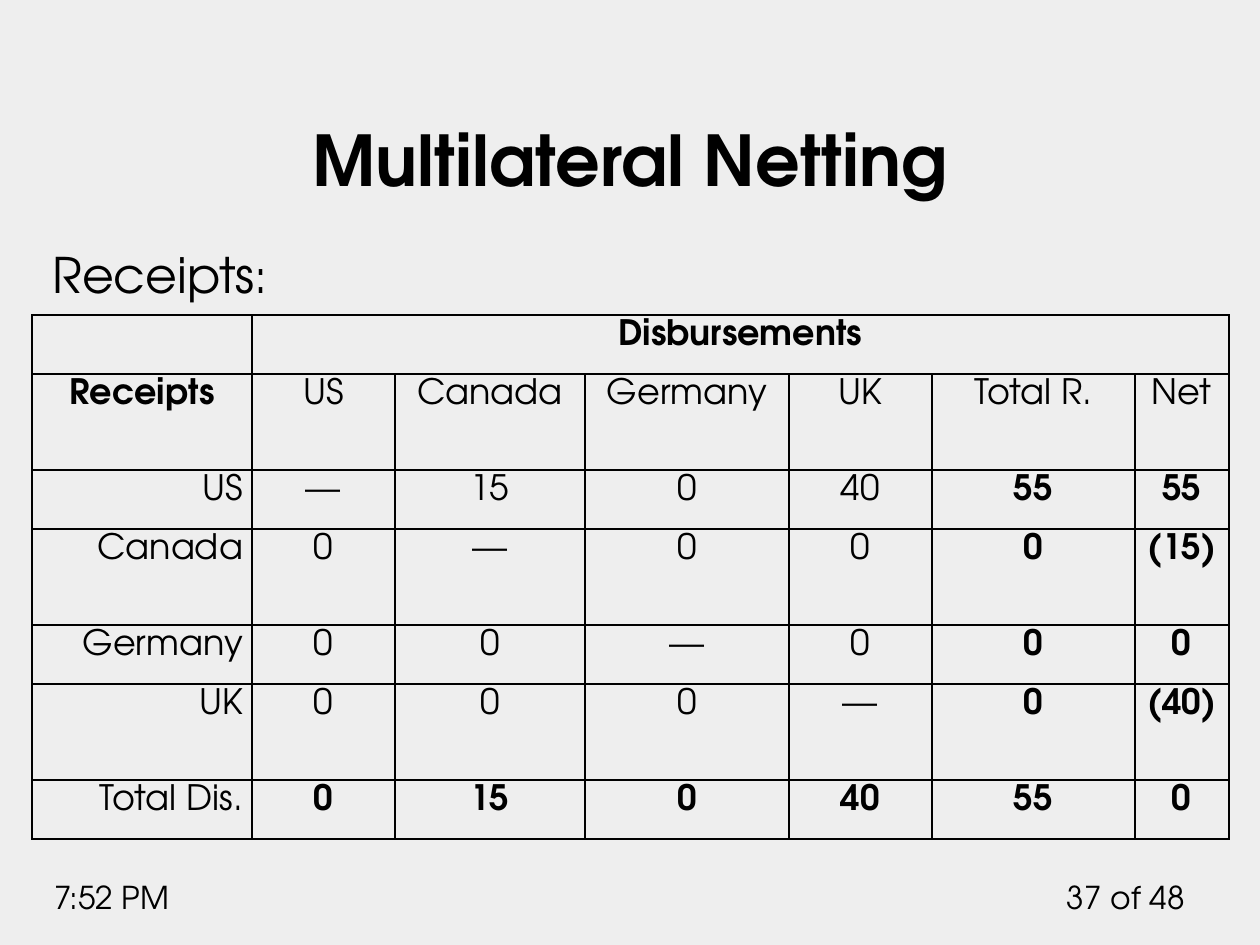
from dataclasses import dataclass

from lxml.etree import SubElement
from pptx import Presentation
from pptx.dml.color import RGBColor
from pptx.enum.text import MSO_ANCHOR, MSO_AUTO_SIZE, PP_ALIGN
from pptx.oxml.ns import qn
from pptx.slide import Slide
from pptx.util import Inches, Pt

COLORS = {"background": "EEEEEE", "ink": "000000"}
COLUMN_WIDTHS = [220, 143, 190, 204, 143, 203, 94]
ROW_HEIGHTS = [59, 96, 59, 96, 59, 96, 59]
NETTING_ROWS = [
    ["", "Disbursements", "", "", "", "", ""],
    ["Receipts", "US", "Canada", "Germany", "UK", "Total R.", "Net"],
    ["US", "—", "15", "0", "40", "55", "55"],
    ["Canada", "0", "—", "0", "0", "0", "(15)"],
    ["Germany", "0", "0", "—", "0", "0", "0"],
    ["UK", "0", "0", "0", "—", "0", "(40)"],
    ["Total Dis.", "0", "15", "0", "40", "55", "0"],
]


def px(length):
    return round(length * Inches(1) / 126)


def color(name):
    return RGBColor.from_string(COLORS[name])


@dataclass
class SlideBuilder:
    page: Slide
    typeface: str = "TeX Gyre Adventor"

    def background(self):
        fill = self.page.background.fill
        fill.solid()
        fill.fore_color.rgb = color("background")

    def style(self, para, size, bold=False, align=PP_ALIGN.LEFT):
        para.alignment = align
        font = para.font
        font.name = self.typeface
        font.size = Pt(size)
        font.bold = bold
        font.color.rgb = color("ink")

    def title(self, text, left, top, width, height):
        box = self.page.shapes.title
        box.left, box.top, box.width, box.height = map(px, (left, top, width, height))
        frame = box.text_frame
        frame.auto_size = MSO_AUTO_SIZE.NONE
        frame.vertical_anchor = MSO_ANCHOR.BOTTOM
        frame.text = text
        self.style(frame.paragraphs[0], 40, True, PP_ALIGN.CENTER)

    def text(self, text, left, top, width, height, size, align=PP_ALIGN.LEFT):
        box = self.page.shapes.add_textbox(*map(px, (left, top, width, height)))
        frame = box.text_frame
        frame.word_wrap = True
        frame.text = text
        para = frame.paragraphs[0]
        self.style(para, size, align=align)
        return para

    def borders(self, cell):
        properties = cell._tc.get_or_add_tcPr()
        for side in ("lnL", "lnR", "lnT", "lnB"):
            line = SubElement(properties, qn(f"a:{side}"), w=str(Pt(1)))
            fill = SubElement(line, qn("a:solidFill"))
            SubElement(fill, qn("a:srgbClr"), val=COLORS["ink"])

    def table(self, rows, left, top, widths, heights, is_bold, is_right):
        frame = self.page.shapes.add_table(
            len(heights), len(widths), *map(px, (left, top, sum(widths), sum(heights)))
        )
        table = frame.table
        table.first_row = table.horz_banding = False
        for column, width in zip(table.columns, widths):
            column.width = px(width)
        for row, height in zip(table.rows, heights):
            row.height = px(height)
        for r, values in enumerate(rows):
            for c, value in enumerate(values):
                cell = table.cell(r, c)
                cell.margin_left = cell.margin_right = px(9)
                cell.margin_top = cell.margin_bottom = 0
                self.borders(cell)
                cell.fill.background()
                cell.text = value
                para = cell.text_frame.paragraphs[0]
                para.line_spacing = 1.15
                align = PP_ALIGN.RIGHT if is_right(r, c) else PP_ALIGN.CENTER
                self.style(para, 20, is_bold(r, c), align)
        return table


def is_bold(row, column):
    if column == 0:
        return row == 1
    return row in (0, 6) or (row > 1 and column > 4)


def is_row_label(row, column):
    return column == 0 and row > 1


def main():
    deck = Presentation()
    deck.slide_width, deck.slide_height = px(1260), px(945)
    builder = SlideBuilder(deck.slides.add_slide(deck.slide_layouts[5]))
    builder.background()
    builder.text("37 of 48", 1050, 872, 147, 50, 18, PP_ALIGN.RIGHT)
    builder.text("7:52 PM", 42, 872, 199, 50, 18)
    label = builder.text("Receipts", 40, 238, 1178, 67, 28)
    colon = label.add_run()
    colon.text = ":"
    colon.font.size = Pt(27)
    builder.title("Multilateral Netting", 63, 49, 1134, 158)
    netting = builder.table(
        NETTING_ROWS, 32, 315, COLUMN_WIDTHS, ROW_HEIGHTS, is_bold, is_row_label
    )
    netting.cell(0, 1).merge(netting.cell(0, 6))
    deck.save("out.pptx")


if __name__ == "__main__":
    main()
